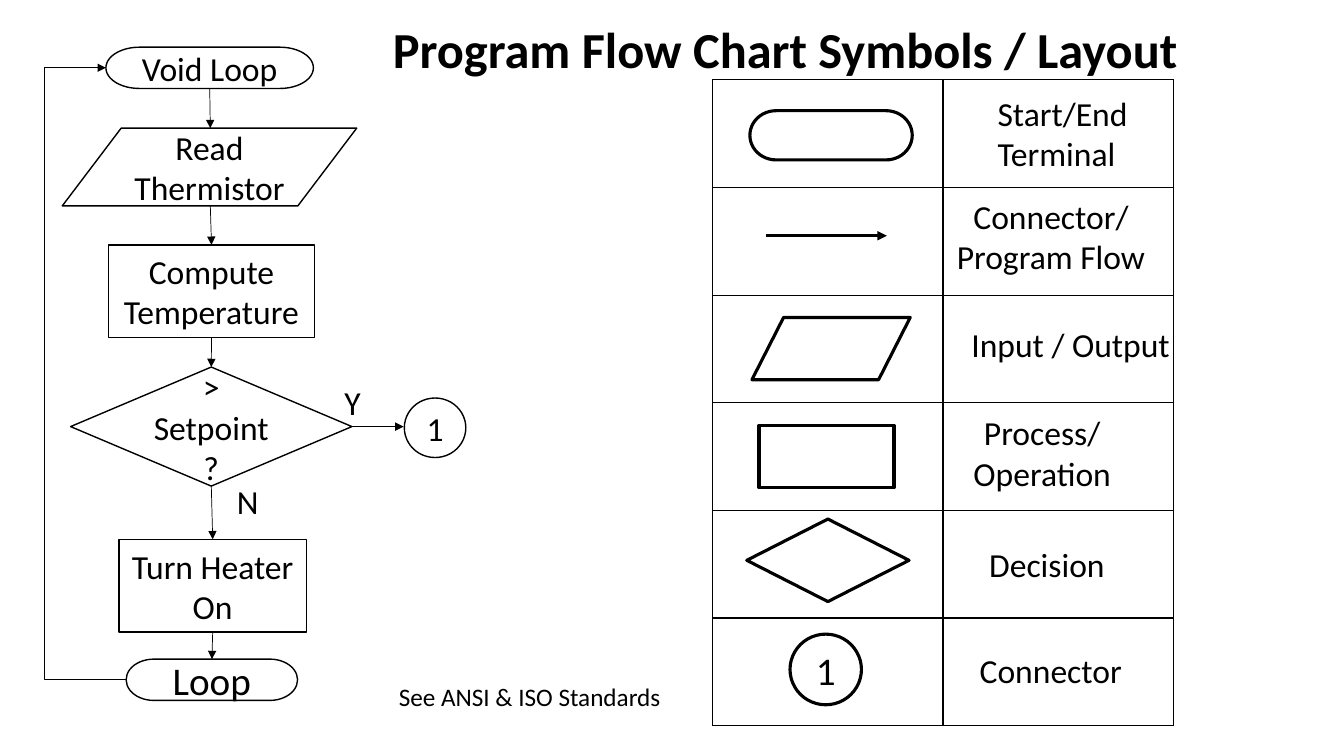
from dataclasses import dataclass

from pptx import Presentation
from pptx.dml.color import RGBColor
from pptx.enum.shapes import MSO_CONNECTOR as Link, MSO_SHAPE as Shape
from pptx.enum.text import MSO_ANCHOR as Anchor, MSO_AUTO_SIZE as AutoSize, PP_ALIGN as Align
from pptx.oxml import parse_xml
from pptx.oxml.ns import nsdecls, qn
from pptx.util import Cm, Pt
from lxml.etree import SubElement


@dataclass(frozen=True)
class Theme:
    ink: RGBColor = RGBColor(0, 0, 0)
    paper: RGBColor = RGBColor(255, 255, 255)
    font: str = "Calibri"
    title: int = 36
    large: int = 28
    body: int = 24
    note: int = 18
    hairline: float = 0.5
    thin: float = 1
    thick: float = 2.25


T = Theme()
TOP, LEFT, BOTTOM, RIGHT = range(4)


def write(tf, text, size=T.body, align=Align.LEFT, bold=False, spacing=None):
    for i, line in enumerate(text.split("\n")):
        p = tf.paragraphs[0] if i == 0 else tf.add_paragraph()
        p.alignment = align
        if spacing:
            p.line_spacing = spacing
        r = p.add_run()
        r.text = line
        r.font.name, r.font.size, r.font.bold = T.font, Pt(size), bold
        r.font.color.rgb = T.ink


def add_symbol(s, kind, box, text="", size=T.body, width=T.thin, filled=True):
    sp = s.shapes.add_shape(kind, *map(Cm, box))
    sp.shadow.inherit = False
    if filled:
        sp.fill.solid()
        sp.fill.fore_color.rgb = T.paper
    else:
        sp.fill.background()
    sp.line.color.rgb = T.ink
    sp.line.width = Pt(width)
    if text:
        tf = sp.text_frame
        tf.word_wrap = True
        tf.vertical_anchor = Anchor.MIDDLE
        write(tf, text, size, Align.CENTER)
    return sp


def add_label(s, box, text, **fmt):
    tf = s.shapes.add_textbox(*map(Cm, box)).text_frame
    tf.word_wrap = False
    tf.auto_size = AutoSize.SHAPE_TO_FIT_TEXT
    write(tf, text, **fmt)


def add_title(s, box, text):
    tf = s.shapes.add_textbox(*map(Cm, box)).text_frame
    tf.word_wrap = True
    tf.vertical_anchor = Anchor.MIDDLE
    write(tf, text, size=T.title, bold=True, spacing=0.9)


def add_arrow(s, start, end, width=T.hairline, kind=Link.STRAIGHT):
    """Each end is a point in cm, or a symbol with one of its sides."""
    joined = [not isinstance(e[0], (int, float)) for e in (start, end)]
    points = [(0, 0) if j else e for j, e in zip(joined, (start, end))]
    c = s.shapes.add_connector(kind, *(Cm(v) for point in points for v in point))
    if joined[0]:
        c.begin_connect(*start)
    if joined[1]:
        c.end_connect(*end)
    c.line.color.rgb = T.ink
    c.line.width = Pt(width)
    spPr = c._element.spPr
    SubElement(spPr.find(qn("a:ln")), qn("a:tailEnd"), type="triangle")
    SubElement(spPr, qn("a:effectLst"))
    return c


def add_return_path(s, start, end, lane):
    c = add_arrow(s, start, end, kind=Link.ELBOW)
    bend = round((c.begin_x - Cm(lane)) / (c.begin_x - c.end_x) * 100000)
    guides = c._element.spPr.find(qn("a:prstGeom")).get_or_add_avLst()
    SubElement(guides, qn("a:gd"), name="adj1", fmla=f"val {bend}")


def add_grid(s, box, rows, cols):
    table = s.shapes.add_table(rows, cols, *map(Cm, box)).table
    table.first_row = table.horz_banding = False
    for row in table.rows:
        row.height = Cm(box[3] / rows)
    for cell in table.iter_cells():
        tcPr = cell._tc.get_or_add_tcPr()
        for side in ("lnL", "lnR", "lnT", "lnB"):
            tcPr.append(parse_xml(
                f'<a:{side} {nsdecls("a")} w="{Pt(T.thin)}"><a:solidFill>'
                f'<a:srgbClr val="{T.ink}"/></a:solidFill></a:{side}>'))
        cell.fill.background()


def add_flow(s):
    # Steps from top to bottom
    start = add_symbol(s, Shape.FLOWCHART_TERMINATOR, (2.67, 1.19, 5.23, 1.04), "Void Loop")
    add_symbol(s, Shape.FLOWCHART_DATA, (1.57, 3.23, 7.42, 1.96), "Read Thermistor")
    compute = add_symbol(s, Shape.FLOWCHART_PROCESS, (2.74, 6.17, 5.18, 2.34),
                         "Compute\nTemperature")
    check = add_symbol(s, Shape.FLOWCHART_DECISION, (1.78, 9.25, 7.09, 3), "> Setpoint ?")
    heater = add_symbol(s, Shape.FLOWCHART_PROCESS, (3, 13.59, 4.72, 2.34), "Turn Heater On")
    loop = add_symbol(s, Shape.FLOWCHART_TERMINATOR, (3.18, 16.61, 4.32, 1.04), "Loop",
                      size=T.large)
    add_symbol(s, Shape.FLOWCHART_CONNECTOR, (10.19, 10.03, 1.55, 1.5), "1", filled=False)

    # Arrows between the steps
    add_arrow(s, (start, BOTTOM), (5.3, 3.23))
    add_arrow(s, (5.3, 5.19), (compute, TOP))
    for upper, lower in ((compute, check), (check, heater), (heater, loop)):
        add_arrow(s, (upper, BOTTOM), (lower, TOP))
    add_arrow(s, (check, RIGHT), (10.17, 10.75))
    add_return_path(s, (loop, LEFT), (start, LEFT), lane=1.12)

    # Branch labels
    add_label(s, (8.43, 9.5, 0.94, 1.27), "Y")
    add_label(s, (5.72, 11.99, 1.07, 1.27), "N")


def add_legend(s):
    add_grid(s, (17.96, 2.01, 11.61, 16.28), rows=6, cols=2)

    # Symbols
    for kind, box, text in (
        (Shape.FLOWCHART_TERMINATOR, (18.9, 2.79, 4.09, 1.24), ""),
        (Shape.FLOWCHART_DATA, (18.95, 8, 3.99, 1.57), ""),
        (Shape.FLOWCHART_PROCESS, (19.13, 10.72, 3.4, 1.57), ""),
        (Shape.FLOWCHART_DECISION, (18.82, 13.08, 4.09, 2.08), ""),
        (Shape.FLOWCHART_CONNECTOR, (19.91, 15.98, 1.8, 1.78), "1"),
    ):
        add_symbol(s, kind, box, text, size=T.large, width=T.thick, filled=False)
    add_arrow(s, (19.3, 5.94), (22.35, 5.94), width=T.thick)

    # Meanings
    for box, text, align in (
        ((24.89, 2.21, 3.81, 2.31), "Start/End\nTerminal", Align.LEFT),
        ((23.83, 4.8, 5.31, 2.31), "Connector/\nProgram Flow", Align.CENTER),
        ((24.23, 8.03, 5.56, 1.27), "Input / Output", Align.LEFT),
        ((24.26, 10.26, 4.01, 2.31), "Process/\nOperation", Align.CENTER),
        ((24.66, 13.59, 3.45, 1.27), "Decision", Align.CENTER),
        ((24.41, 16.26, 4.14, 1.27), "Connector", Align.CENTER),
    ):
        add_label(s, box, text, align=align)


def main():
    prs = Presentation()
    prs.slide_width, prs.slide_height = Cm(33.87), Cm(19.05)
    s = prs.slides.add_slide(prs.slide_layouts[6])
    add_title(s, (9.65, 0, 22.38, 2.62), "Program Flow Chart Symbols / Layout")
    add_flow(s)
    add_legend(s)
    add_label(s, (9.8, 17.04, 7.19, 1.02), "See ANSI & ISO Standards", size=T.note)
    prs.save("out.pptx")


if __name__ == "__main__":
    main()
